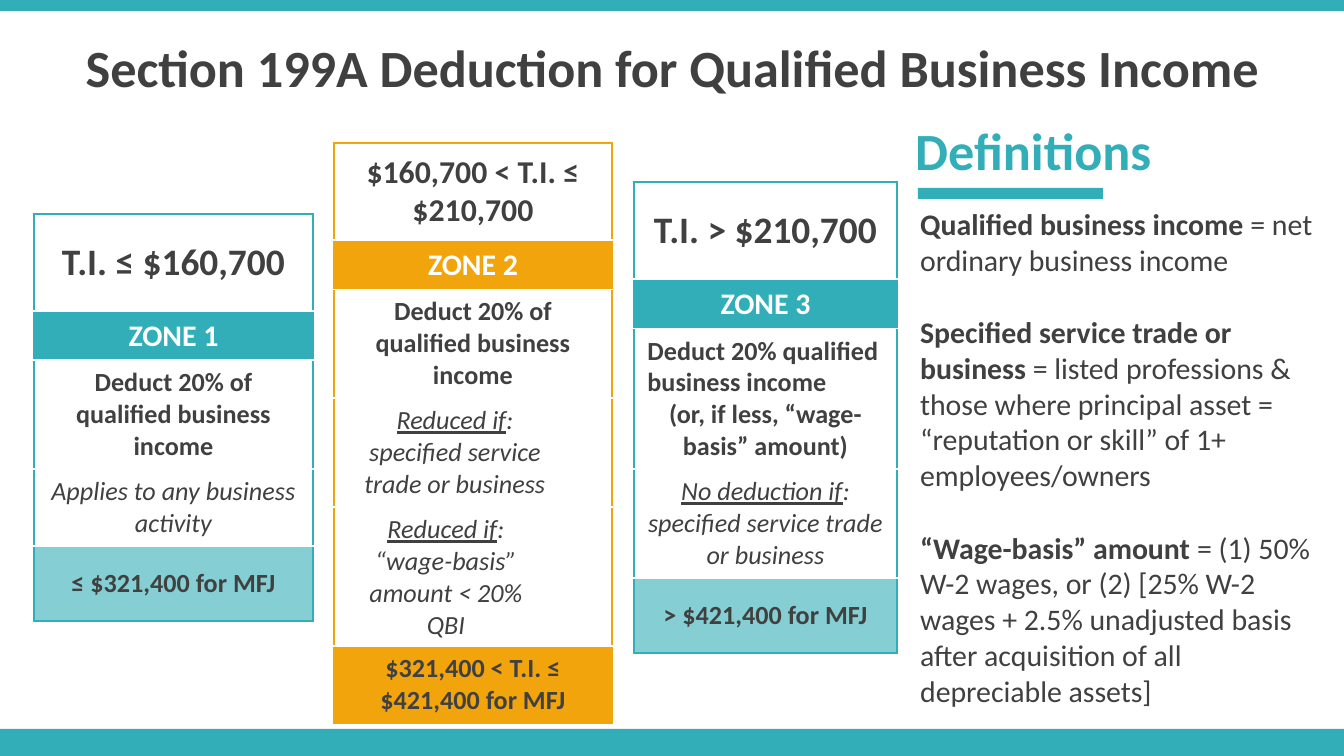
from dataclasses import dataclass

from lxml.etree import SubElement
from pptx import Presentation
from pptx.dml.color import RGBColor
from pptx.enum.shapes import MSO_SHAPE as Shape
from pptx.enum.text import MSO_ANCHOR as Anchor, PP_ALIGN as Align
from pptx.oxml.ns import qn
from pptx.util import Emu, Pt

PX = 914400 / 134.4
WIDTH, HEIGHT = 1344, 756


def px(length):
    return Emu(round(length * PX))


@dataclass(frozen=True)
class Theme:
    font: str = "Calibri"
    teal: str = "32AEB8"
    orange: str = "F2A40D"
    ink: str = "404040"
    white: str = "FFFFFF"
    title: int = 28
    limit: int = 20
    long_limit: int = 17
    zone: int = 16
    body: int = 14
    definition: int = 16
    border: float = 1.5


@dataclass
class Line:
    """One paragraph: spans are (text, flags), flags from b, i and u."""
    spans: list
    align: Align = Align.CENTER
    right: int = 0
    after: float = 0


def plain(text, flags="b"):
    return [Line([(text, flags)])]


class Painter:
    def __init__(self, page, theme):
        self.page, self.theme = page, theme

    def bar(self, left, top, width, height):
        shape = self.page.shapes.add_shape(Shape.RECTANGLE, px(left), px(top), px(width), px(height))
        shape.shadow.inherit = False
        shape.fill.solid()
        shape.fill.fore_color.rgb = RGBColor.from_string(self.theme.teal)
        shape.line.fill.background()

    def set_lines(self, frame, lines, size, color):
        for index, line in enumerate(lines):
            para = frame.add_paragraph() if index else frame.paragraphs[0]
            para.alignment = line.align
            para.space_after = Pt(line.after)
            if line.right:
                para._p.get_or_add_pPr().set("marR", str(px(line.right)))
            font = para.font
            font.name, font.size = self.theme.font, Pt(size)
            font.color.rgb = RGBColor.from_string(color)
            for text, flags in line.spans:
                span = para.add_run()
                span.text = text
                span.font.bold = "b" in flags
                span.font.italic = "i" in flags
                span.font.underline = "u" in flags

    def text(self, left, top, width, height, lines, size, color, anchor=Anchor.TOP):
        box = self.page.shapes.add_textbox(px(left), px(top), px(width), px(height))
        frame = box.text_frame
        frame.word_wrap = True
        frame.vertical_anchor = anchor
        self.set_lines(frame, lines, size, color)

    def border(self, cell, side, color):
        line = SubElement(cell._tc.get_or_add_tcPr(), qn(f"a:ln{side}"), w=str(Pt(self.theme.border)))
        fill = SubElement(line, qn("a:solidFill"))
        SubElement(fill, qn("a:srgbClr"), val=color)

    def fill(self, cell, color, alpha):
        cell.fill.solid()
        cell.fill.fore_color.rgb = RGBColor.from_string(color)
        if alpha < 100:
            tone = cell._tc.tcPr.find(f"{qn('a:solidFill')}/{qn('a:srgbClr')}")
            SubElement(tone, qn("a:alpha"), val=str(alpha * 1000))

    def zone(self, left, top, width, color, limit, limit_size, name, rules, joint, joint_alpha):
        """Stack limit, zone name, rules and joint-filer limit in one column."""
        theme = self.theme
        rows = [(97, plain(limit), limit_size, theme.ink, theme.white, 100),
                (48, plain(name), theme.zone, theme.white, color, 100)]
        rows += [(height, lines, theme.body, theme.ink, theme.white, 100) for height, lines in rules]
        rows.append((75, plain(joint), theme.body, theme.ink, color, joint_alpha))

        total = sum(row[0] for row in rows)
        table = self.page.shapes.add_table(len(rows), 1, px(left), px(top), px(width), px(total)).table
        table.first_row = table.horz_banding = False
        for index, (height, lines, size, ink, back, alpha) in enumerate(rows):
            table.rows[index].height = px(height)
            cell = table.cell(index, 0)
            cell.vertical_anchor = Anchor.MIDDLE
            self.set_lines(cell.text_frame, lines, size, ink)
            sides = "LR" + "T" * (index == 0) + "B" * (index == len(rows) - 1)
            for side in sides:
                self.border(cell, side, color)
            self.fill(cell, back, alpha)


def main():
    deck = Presentation()
    deck.slide_width, deck.slide_height = px(WIDTH), px(HEIGHT)
    theme = Theme()
    painter = Painter(deck.slides.add_slide(deck.slide_layouts[6]), theme)

    # Frame and title
    painter.bar(0, 729, WIDTH, 27)
    painter.bar(0, 0, WIDTH, 11)
    painter.text(0, 24, WIDTH, 85, plain("Section 199A Deduction for Qualified Business Income"),
                 theme.title, theme.ink, Anchor.MIDDLE)

    # Zones
    three_lines = 109
    deduct = plain("Deduct 20% of qualified business income")
    painter.zone(34, 214, 279, theme.teal, "T.I. ≤ $160,700", theme.limit, "ZONE 1",
                 [(three_lines, deduct), (77, plain("Applies to any business activity", "i"))],
                 "≤ $321,400 for MFJ", 60)
    painter.zone(634, 182, 263, theme.teal, "T.I. > $210,700", theme.limit, "ZONE 3",
                 [(141, [Line([("Deduct 20% qualified business income", "b")], Align.LEFT),
                         Line([("(or, if less, “wage-basis” amount)", "b")])]),
                  (three_lines, [Line([("No deduction if", "iu"),
                                       (": specified service trade or business", "i")])])],
                 "> $421,400 for MFJ", 60)
    reduced = [("Reduced if", "iu"), (":", "i")]
    painter.zone(334, 143, 278, theme.orange, "$160,700 < T.I. ≤ $210,700", theme.long_limit, "ZONE 2",
                 [(three_lines, deduct),
                  (three_lines, [Line(reduced, right=36),
                                 *plain("specified service trade or business", "i")]),
                  (three_lines, [Line(reduced, right=54),
                                 *plain("“wage-basis” amount < 20% QBI", "i")])],
                 "$321,400 < T.I. ≤ $421,400 for MFJ", 100)

    # Definitions
    painter.text(902, 112, 402, 77, [Line([("Definitions", "b")], Align.LEFT)], theme.title, theme.teal)
    painter.bar(918, 188, 185, 11)
    definitions = [
        ("Qualified business income ", "= net ordinary business income"),
        ("Specified service trade or business ",
         "= listed professions & those where principal asset = “reputation or skill” of 1+ employees/owners"),
        ("“Wage-basis” amount ",
         "= (1) 50% W-2 wages, or (2) [25% W-2 wages + 2.5% unadjusted basis "
         "after acquisition of all depreciable assets]"),
    ]
    painter.text(907, 199, 425, 520,
                 [Line([(term, "b"), (meaning, "")], Align.LEFT, after=19.5) for term, meaning in definitions],
                 theme.definition, theme.ink)

    deck.save("out.pptx")


if __name__ == "__main__":
    main()
